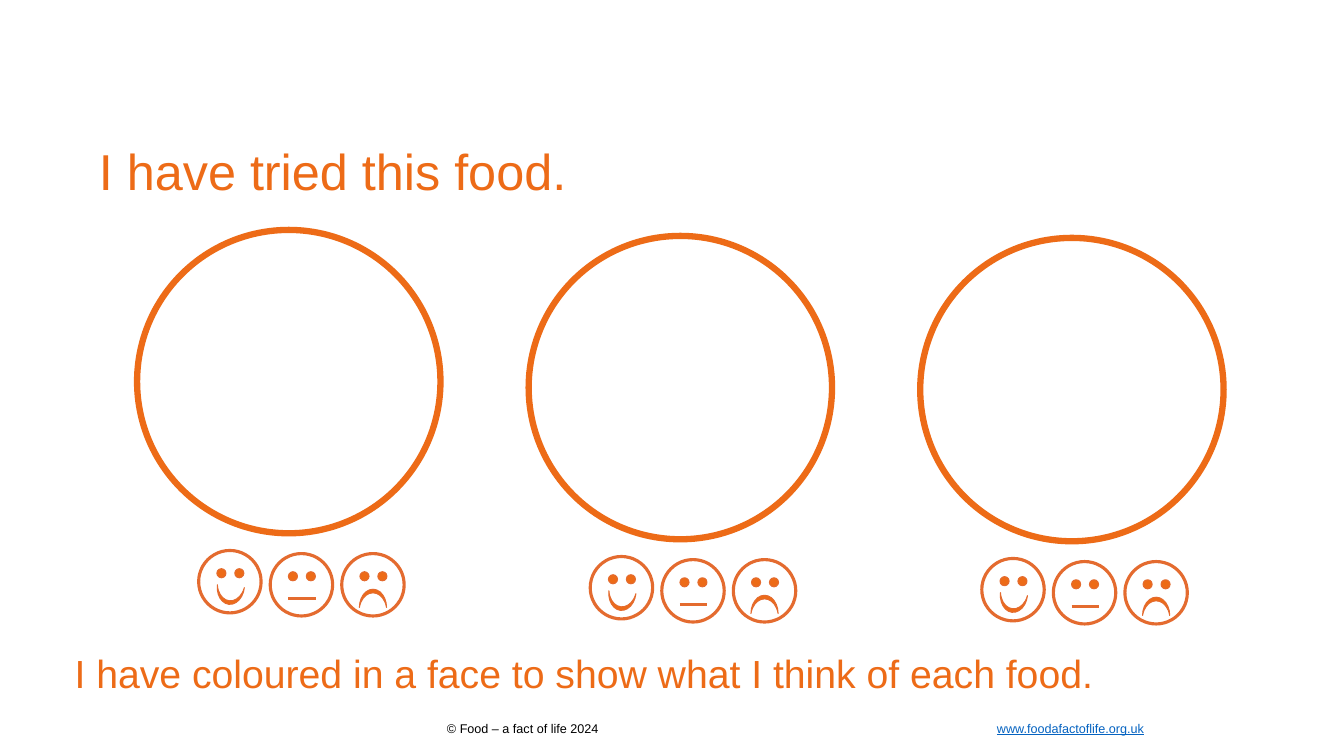
from dataclasses import dataclass

from lxml.etree import SubElement
from pptx import Presentation
from pptx.dml.color import RGBColor
from pptx.enum.shapes import MSO_CONNECTOR, MSO_SHAPE
from pptx.enum.text import MSO_ANCHOR, MSO_AUTO_SIZE, PP_ALIGN
from pptx.oxml.ns import qn
from pptx.util import Pt


@dataclass(frozen=True)
class Theme:
    font: str = "Arial"
    orange: RGBColor = RGBColor(0xED, 0x6B, 0x17)
    outline: RGBColor = RGBColor(0xE4, 0x6B, 0x2F)
    white: RGBColor = RGBColor(0xFF, 0xFF, 0xFF)
    black: RGBColor = RGBColor(0, 0, 0)
    link: RGBColor = RGBColor(0x05, 0x63, 0xC1)
    title_size: int = 36
    prompt_size: int = 28
    footer_size: int = 9


THEME = Theme()
PLATE_SIZE = 216.7
PLATE_LEFT, PLATE_PITCH = 97.9, 279.7
PLATE_TOPS = (164.2, 168.5, 169.9)
FACE_SIZE, FACE_LEFT, FACE_PITCH = 44.6, 44, 51.1
FACES = (("happy", 229), ("neutral", 231.2), ("sad", 231.2))
EYE_SIZE, EYE_TOP, EYE_LEFTS = 6.5, 13, (13, 25.8)
MOUTH_WIDTH = 19.4
MOON_ROTATIONS = {"happy": 276.2, "sad": 90}


def place(shape, left, top, width, height):
    shape.left, shape.top = Pt(left), Pt(top)
    shape.width, shape.height = Pt(width), Pt(height)


def write(paragraph, text, size, color, underline=False):
    run = paragraph.add_run()
    run.text = text
    font = run.font
    font.name, font.size, font.underline = THEME.font, Pt(size), underline
    font.color.rgb = color


def prepare_text(shape, line_spacing=None):
    """Clear the margins of a text shape and return its first paragraph."""
    frame = shape.text_frame
    frame.word_wrap = True
    frame.auto_size = MSO_AUTO_SIZE.NONE
    frame.vertical_anchor = MSO_ANCHOR.TOP
    frame.margin_left = frame.margin_right = Pt(0)
    frame.margin_top = frame.margin_bottom = Pt(0)
    paragraph = frame.paragraphs[0]
    paragraph.alignment = PP_ALIGN.LEFT
    paragraph.line_spacing = line_spacing
    return paragraph


def add_outlined(shapes, kind, left, top, width, height, line_width, line, fill=None):
    shape = shapes.add_shape(kind, Pt(left), Pt(top), Pt(width), Pt(height))
    shape.shadow.inherit = False
    shape.line.width = Pt(line_width)
    shape.line.color.rgb = line
    if fill is None:
        shape.fill.background()
    else:
        shape.fill.solid()
        shape.fill.fore_color.rgb = fill
    return shape


def add_mouth(shapes, mood, left, top):
    if mood == "neutral":
        start, level = left + EYE_LEFTS[0], top + 32.2
        mouth = shapes.add_connector(
            MSO_CONNECTOR.STRAIGHT,
            Pt(start), Pt(level), Pt(start + MOUTH_WIDTH), Pt(level))
        mouth.line.width = Pt(2.25)
        mouth.line.color.rgb = THEME.outline
        SubElement(mouth.line._get_or_add_ln().getparent(), qn("a:effectLst"))
    else:
        mouth = add_outlined(shapes, MSO_SHAPE.MOON, left + 15.8, top + 22.3,
                             13, MOUTH_WIDTH, 0.75, THEME.outline, THEME.orange)
        mouth.adjustments[0] = 0.195
        mouth.rotation = MOON_ROTATIONS[mood]


def add_face(shapes, mood, left, top):
    add_outlined(shapes, MSO_SHAPE.OVAL, left, top, FACE_SIZE, FACE_SIZE,
                 2.25, THEME.outline, THEME.white)
    for eye_left in EYE_LEFTS:
        add_outlined(shapes, MSO_SHAPE.OVAL, left + eye_left, top + EYE_TOP,
                     EYE_SIZE, EYE_SIZE, 0.75, THEME.outline, THEME.orange)
    add_mouth(shapes, mood, left, top)


def add_food_rating(slide, left, top):
    """Group an empty plate with the three faces below it."""
    shapes = slide.shapes.add_group_shape().shapes
    add_outlined(shapes, MSO_SHAPE.OVAL, left, top, PLATE_SIZE, PLATE_SIZE,
                 4.5, THEME.orange)
    for index, (mood, drop) in enumerate(FACES):
        add_face(shapes, mood, left + FACE_LEFT + index * FACE_PITCH, top + drop)


def add_footer(slide):
    box = slide.shapes.add_textbox(Pt(90.7), Pt(514.8), Pt(850), Pt(10.8))
    paragraph = prepare_text(box)
    properties = paragraph._p.get_or_add_pPr()
    properties.set("marL", str(Pt(621.4)))
    properties.set("indent", "0")
    tabs = SubElement(properties, qn("a:tabLst"))
    SubElement(tabs, qn("a:tab"), pos=str(Pt(736.4)), algn="l")
    write(paragraph, "www.foodafactoflife.org.uk", THEME.footer_size, THEME.link,
          underline=True)
    write(paragraph, "\t© Food – a fact of life 2024", THEME.footer_size, THEME.black)


def main():
    presentation = Presentation()
    presentation.slide_width, presentation.slide_height = Pt(960), Pt(540)
    slide = presentation.slides.add_slide(presentation.slide_layouts[5])

    title = slide.shapes.title
    place(title, 70.6, 105.1, 765.4, 56.9)
    write(prepare_text(title, 0.9), "I have tried this food.",
          THEME.title_size, THEME.orange)

    prompt = slide.shapes.add_textbox(Pt(53.3), Pt(467.3), Pt(765.4), Pt(56.9))
    write(prepare_text(prompt, 0.9),
          "I have coloured in a face to show what I think of each food.",
          THEME.prompt_size, THEME.orange)

    for index, top in enumerate(PLATE_TOPS):
        add_food_rating(slide, PLATE_LEFT + index * PLATE_PITCH, top)
    add_footer(slide)
    presentation.save("out.pptx")


if __name__ == "__main__":
    main()
